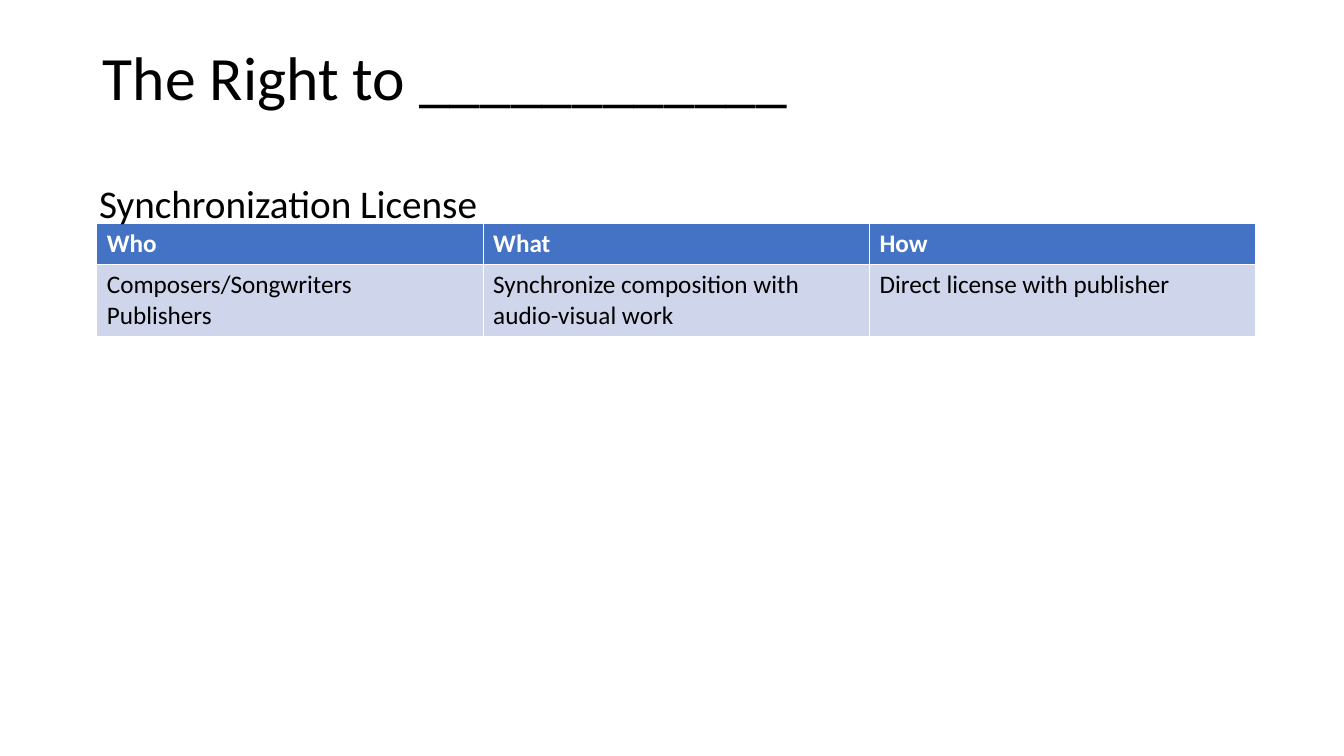
from dataclasses import dataclass

from pptx import Presentation
from pptx.dml.color import RGBColor
from pptx.enum.text import MSO_ANCHOR, MSO_AUTO_SIZE, PP_ALIGN
from pptx.util import Cm, Pt


@dataclass(frozen=True)
class Theme:
    font: str = "Calibri"
    ink: RGBColor = RGBColor(0x00, 0x00, 0x00)
    paper: RGBColor = RGBColor(0xFF, 0xFF, 0xFF)
    header_fill: RGBColor = RGBColor(0x44, 0x72, 0xC4)
    body_fill: RGBColor = RGBColor(0xCF, 0xD5, 0xEA)
    title_size: int = 44
    heading_size: int = 28
    table_size: int = 18


THEME = Theme()

# Boxes: left, top, width, height in centimetres
TITLE_BOX = (2.34, 1.02, 29.21, 1.98)
HEADING_BOX = (0.3, 4.39, 13.92, 1.45)
TABLE_BOX = (2.44, 5.64, 29.21, 2.82)
HEADER_HEIGHT = 1.03

LICENSE_ROWS = [
    ["Who", "What", "How"],
    [
        "Composers/Songwriters\nPublishers",
        "Synchronize composition with audio-visual work",
        "Direct license with publisher",
    ],
]


def set_attributes(target, values):
    for name, value in values.items():
        setattr(target, name, value)


def write(frame, text, size, color, bold=False, **paragraph_format):
    frame.text = text
    for paragraph in frame.paragraphs:
        set_attributes(paragraph, paragraph_format)
        set_attributes(
            paragraph.font, {"name": THEME.font, "size": Pt(size), "bold": bold}
        )
        paragraph.font.color.rgb = color


def place_title(slide, box, text):
    title = slide.shapes.title
    set_attributes(title, dict(zip(("left", "top", "width", "height"), map(Cm, box))))
    set_attributes(
        title.text_frame,
        {"vertical_anchor": MSO_ANCHOR.BOTTOM, "auto_size": MSO_AUTO_SIZE.NONE},
    )
    write(title.text_frame, text, THEME.title_size, THEME.ink,
          alignment=PP_ALIGN.LEFT, line_spacing=0.9)


def add_license_table(slide, box, rows):
    left, top, width, height = box
    columns = len(rows[0])
    licenses = slide.shapes.add_table(len(rows), columns, *map(Cm, box)).table
    for column in licenses.columns:
        column.width = Cm(width / columns)
    licenses.rows[0].height = Cm(HEADER_HEIGHT)
    licenses.rows[1].height = Cm(height - HEADER_HEIGHT)

    for row_index, row in enumerate(rows):
        is_header = row_index == 0
        fill = THEME.header_fill if is_header else THEME.body_fill
        color = THEME.paper if is_header else THEME.ink
        for column_index, text in enumerate(row):
            cell = licenses.cell(row_index, column_index)
            cell.fill.solid()
            cell.fill.fore_color.rgb = fill
            write(cell.text_frame, text, THEME.table_size, color, bold=is_header)


def add_heading(slide, box, text):
    heading = slide.shapes.add_textbox(*map(Cm, box)).text_frame
    set_attributes(
        heading, {"word_wrap": True, "auto_size": MSO_AUTO_SIZE.SHAPE_TO_FIT_TEXT}
    )
    write(heading, text, THEME.heading_size, THEME.ink, alignment=PP_ALIGN.CENTER)


def build_license_slide(deck):
    slide = deck.slides.add_slide(deck.slide_layouts.get_by_name("Title Only"))
    # Title
    place_title(slide, TITLE_BOX, "The Right to ____________")
    # License table and the heading above it
    add_license_table(slide, TABLE_BOX, LICENSE_ROWS)
    add_heading(slide, HEADING_BOX, "Synchronization License")


def main():
    deck = Presentation()
    set_attributes(deck, {"slide_width": Cm(33.87), "slide_height": Cm(19.05)})
    build_license_slide(deck)
    deck.save("out.pptx")


if __name__ == "__main__":
    main()
